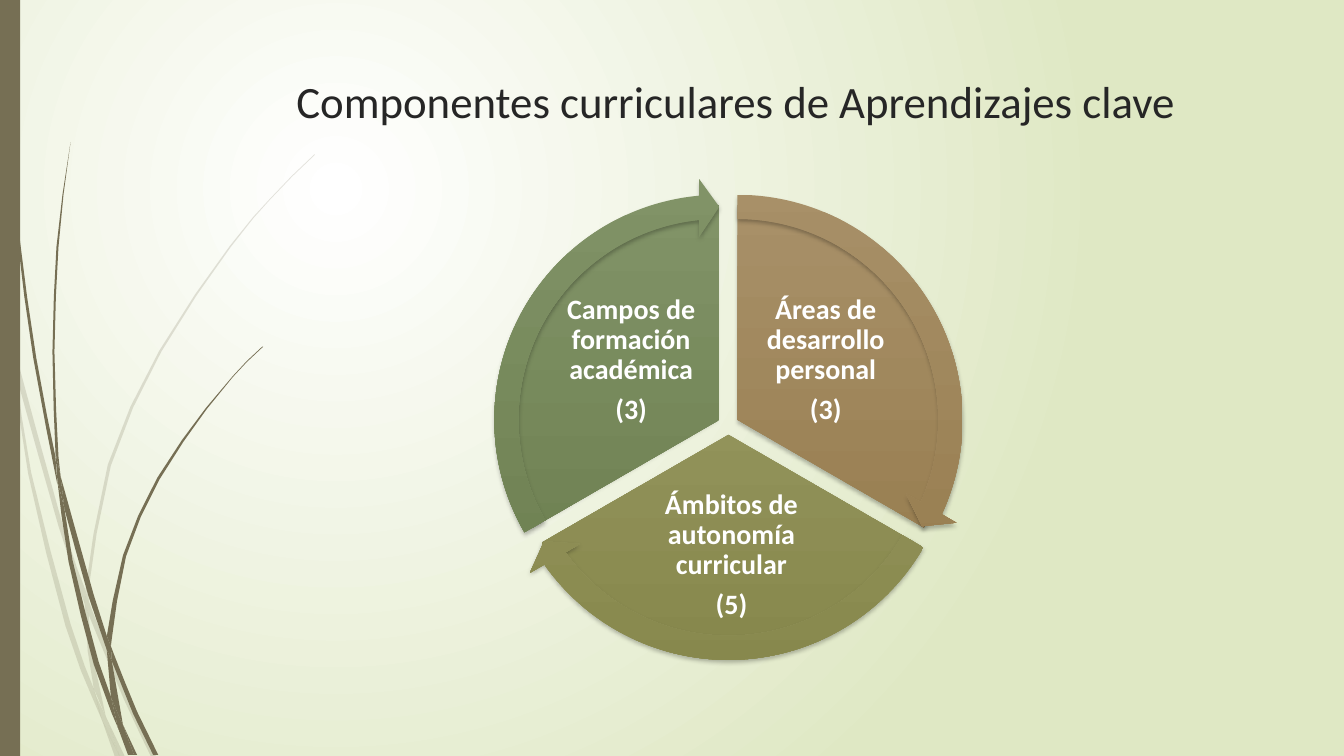
"""Build the slide on the curricular components of Aprendizajes clave."""
import math

import lxml.etree
import pptx
import pptx.dml.color
import pptx.enum.shapes
import pptx.enum.text
import pptx.oxml
import pptx.oxml.ns
import pptx.util

RGBColor = pptx.dml.color.RGBColor
MSO_SHAPE = pptx.enum.shapes.MSO_SHAPE
MSO_ANCHOR = pptx.enum.text.MSO_ANCHOR
qn = pptx.oxml.ns.qn

COLUMNS, ROWS = 1333, 750
CELL = pptx.util.Inches(7.5) // ROWS
FONT = "Calibri"

WHITE = RGBColor(0xFF, 0xFF, 0xFF)
PALE_GREEN = RGBColor(0xDF, 0xE8, 0xC4)
UMBER = RGBColor(0x76, 0x6F, 0x54)
CHARCOAL = RGBColor(0x26, 0x26, 0x26)
BLACK = RGBColor(0, 0, 0)
BROWN = (RGBColor(0xA8, 0x90, 0x68), RGBColor(0x94, 0x7A, 0x4B))
OLIVE = (RGBColor(0x9D, 0x9D, 0x67), RGBColor(0x87, 0x88, 0x4D))
GREEN = (RGBColor(0x81, 0x93, 0x67), RGBColor(0x6A, 0x7D, 0x4D))

LONG_STRETCH = 60
PIE_SIZE, ARROW_SIZE = 427, 480
FULL_TURN, THIRD_TURN = 216, 72
FIRST_START = 162
ARROW_BAND, ARROW_HEAD, ARROW_WIDTH = 0.05, 3.28, 0.06
SOFT_SHADOW = (25, 3, 2, 90)
SIDE_SHADOW = (40, 4, 3, 180)

SECTORS = [
    (["Áreas de desarrollo personal", "(3)"], BROWN, (731.5, 416.5), (743, 294, 152, 127), SOFT_SHADOW),
    (["Ámbitos de autonomía curricular", "(5)"], OLIVE, (722.5, 431.5), (611, 495, 229, 112), SOFT_SHADOW),
    (["Campos de formación académica", "(3)"], GREEN, (713.5, 416.5), (550, 294, 152, 127), SIDE_SHADOW),
]

FAINT_BLADES = [
    ([(11, 350), (9, 322), (0, 282)], [(0, 299), (10, 344)]),
    ([(14, 345), (62, 520), (85, 586)], [(84, 599), (58, 522), (17, 376)]),
    ([(88, 596), (92, 607), (127, 692), (155, 751)], [(150, 751), (123, 694), (88, 610)]),
    ([(105, 711), (124, 751)], [(119, 751)]),
    ([(101, 714), (92, 693), (65, 621), (28, 470), (11, 350)],
     [(17, 376), (31, 469), (70, 619), (93, 683)]),
    ([(84, 599), (87, 646), (93, 683), (105, 711)], [(91, 646), (88, 610)]),
    ([(88, 596), (88, 584), (110, 462), (160, 349), (229, 245), (268, 198), (290, 175), (312, 154)],
     [(312, 153), (289, 175), (268, 197), (228, 244), (158, 348), (107, 461), (85, 584)]),
    ([(101, 714), (114, 751)], [(119, 751)]),
    ([(84, 599), (88, 610)], [(88, 596), (85, 586)]),
    ([(93, 683), (99, 707), (101, 714), (119, 751)], [(105, 711), (96, 692)]),
]

DARK_BLADES = [
    ([(3, 0), (4, 48), (7, 110), (17, 233), (33, 355), (57, 481)],
     [(55, 453), (36, 355), (19, 232), (8, 109), (5, 48), (4, 0)]),
    ([(60, 472), (93, 590), (106, 631)], [(106, 645), (88, 592), (64, 505)]),
    ([(110, 641), (113, 649), (136, 706), (157, 749)], [(152, 749), (132, 708), (111, 656)]),
    ([(117, 722), (111, 708), (93, 659), (68, 557), (57, 477)],
     [(64, 505), (72, 556), (98, 657), (110, 691)]),
    ([(60, 472), (58, 453), (54, 349), (58, 245), (63, 193), (70, 141)],
     [(62, 193), (56, 245), (52, 349), (55, 449)]),
    ([(122, 719), (136, 749)], [(133, 749)]),
    ([(55, 449), (57, 477)], [(64, 505), (60, 472)]),
    ([(110, 641), (111, 633), (125, 552), (158, 476), (205, 406), (231, 374), (245, 359), (261, 344)],
     [(260, 344), (245, 358), (231, 373), (204, 405), (156, 474), (122, 551), (106, 631)]),
    ([(117, 722), (127, 749)], [(131, 749)]),
    ([(106, 645), (110, 691), (116, 706), (122, 719)], [(111, 656)]),
    ([(106, 631), (106, 645)], [(111, 656), (110, 641)]),
    ([(110, 691), (117, 722), (130, 749)], [(133, 749), (122, 719), (116, 706)]),
]


def cells(*values):
    """Turn grid counts into lengths."""
    return [round(value * CELL) for value in values]


def soften(points):
    """Return the points with a bowed midpoint in each long stretch."""
    padded = [points[0], *points, points[-1]]
    curve = []
    for before, start, end, after in zip(padded, padded[1:], padded[2:], padded[3:]):
        curve.append(start)
        if math.dist(start, end) > LONG_STRETCH:
            curve.append(tuple((9 * (q + r) - p - s) / 16
                               for p, q, r, s in zip(before, start, end, after)))
    return curve + [points[-1]]


def set_background(slide):
    """Fill the slide with a glow centred in its upper left quarter."""
    slide.background.fill.solid()
    solid = slide.background._cSld.find(".//" + qn("a:solidFill"))
    stops = "".join(f'<a:gs pos="{position}"><a:srgbClr val="{color}"/></a:gs>'
                    for position, color in ((0, WHITE), (100000, PALE_GREEN)))
    gradient = pptx.oxml.parse_xml(
        f'<a:gradFill {pptx.oxml.ns.nsdecls("a")} rotWithShape="1"><a:gsLst>{stops}</a:gsLst>'
        '<a:path path="circle"><a:fillToRect l="50000" t="50000" r="100000" b="100000"/></a:path>'
        '</a:gradFill>')
    solid.getparent().replace(solid, gradient)


def paint(shape, color, opacity=100):
    """Give a shape a plain fill without line or shadow."""
    shape.fill.solid()
    shape.fill.fore_color.rgb = color
    shape.line.fill.background()
    shape.shadow.inherit = False
    if opacity < 100:
        tint = shape._element.spPr.find(".//" + qn("a:srgbClr"))
        lxml.etree.SubElement(tint, qn("a:alpha"), val=str(opacity * 1000))


def add_grass(slide, blades, opacity):
    """Add a group of curved blades."""
    group = slide.shapes.add_group_shape()
    for outward, back in blades:
        outline = [cells(*point) for point in soften(outward) + soften(back)]
        builder = group.shapes.build_freeform(*outline[0], scale=1.0)
        builder.add_line_segments(outline[1:], close=True)
        paint(builder.convert_to_shape(), UMBER, opacity)


def add_text(shapes, box, lines, size, color, bold=False, anchor=MSO_ANCHOR.TOP):
    """Add a wrapped text box with one run in each paragraph."""
    text_frame = shapes.add_textbox(*cells(*box)).text_frame
    text_frame.word_wrap = True
    text_frame.vertical_anchor = anchor
    text_frame.text = "\n".join(lines)
    for paragraph in text_frame.paragraphs:
        font = paragraph.runs[0].font
        font.name, font.size, font.bold = FONT, pptx.util.Pt(size), bold
        font.color.rgb = color
    return text_frame


def add_label(shapes, box, lines):
    """Add a centred label inside a sector."""
    text_frame = add_text(shapes, box, lines, 20, WHITE, True, MSO_ANCHOR.MIDDLE)
    text_frame.margin_left = text_frame.margin_right = cells(3)[0]
    text_frame.margin_top = text_frame.margin_bottom = cells(3)[0]
    for paragraph in text_frame.paragraphs:
        paragraph.alignment = pptx.enum.text.PP_ALIGN.CENTER
        paragraph.line_spacing = 0.9
        paragraph.space_after = pptx.util.Pt(7)


def add_cycle_part(shapes, kind, center, size, adjustments, colors, shadow):
    """Add a shaded round shape about a centre."""
    x, y = center
    shape = shapes.add_shape(kind, *cells(x - size / 2, y - size / 2, size, size))
    for index, value in enumerate(adjustments):
        shape.adjustments[index] = value
    shape.fill.gradient()
    shape.fill.gradient_angle = 270
    for stop, color in zip(shape.fill.gradient_stops, colors):
        stop.color.rgb = color
    shape.line.fill.background()
    shape.shadow.inherit = False
    opacity, blur, distance, direction = shadow
    outer = lxml.etree.SubElement(
        shape._element.spPr.find(qn("a:effectLst")), qn("a:outerShdw"),
        blurRad=str(pptx.util.Pt(blur)), dist=str(pptx.util.Pt(distance)),
        dir=str(direction * 60000), rotWithShape="0")
    tint = lxml.etree.SubElement(outer, qn("a:srgbClr"), val=str(BLACK))
    lxml.etree.SubElement(tint, qn("a:alpha"), val=str(opacity * 1000))


def add_cycle(slide):
    """Add the three sectors with labels, then the arrows over them."""
    shapes = slide.shapes.add_group_shape().shapes
    starts = [(FIRST_START + index * THIRD_TURN) % FULL_TURN for index in range(len(SECTORS))]
    ends = starts[1:] + starts[:1]
    for start, end, (lines, colors, center, box, shadow) in zip(starts, ends, SECTORS):
        add_cycle_part(shapes, MSO_SHAPE.PIE, center, PIE_SIZE, (start, end), colors, shadow)
        add_label(shapes, box, lines)
    for start, end, (_, colors, center, _, _) in zip(starts, ends, SECTORS):
        adjustments = (ARROW_BAND, ARROW_HEAD, end - ARROW_HEAD, start, ARROW_WIDTH)
        add_cycle_part(shapes, MSO_SHAPE.CIRCULAR_ARROW, center, ARROW_SIZE,
                       adjustments, colors, SOFT_SHADOW)


def main():
    """Build and save the presentation."""
    presentation = pptx.Presentation()
    presentation.slide_width, presentation.slide_height = cells(COLUMNS, ROWS)
    slide = presentation.slides.add_slide(presentation.slide_layouts[6])
    set_background(slide)
    add_grass(slide, FAINT_BLADES, 20)
    add_grass(slide, DARK_BLADES, 100)
    paint(slide.shapes.add_shape(MSO_SHAPE.RECTANGLE, *cells(0, 0, 20, ROWS)), UMBER)
    add_text(slide.shapes, (284, 68, 975, 69),
             ["Componentes curriculares de Aprendizajes clave"], 32, CHARCOAL)
    add_cycle(slide)
    presentation.save("out.pptx")


if __name__ == "__main__":
    main()
